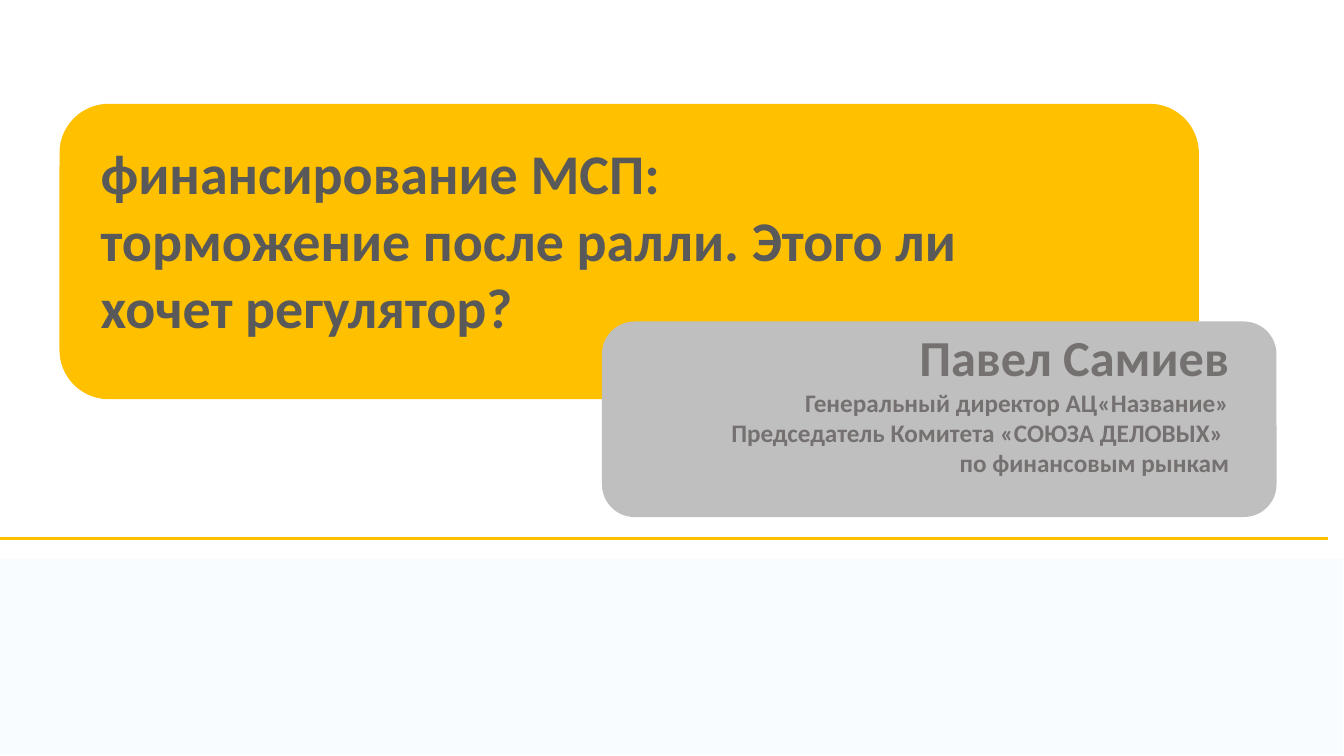
from dataclasses import dataclass

from lxml.etree import SubElement
from pptx import Presentation
from pptx.dml.color import RGBColor
from pptx.enum.shapes import MSO_CONNECTOR, MSO_SHAPE
from pptx.enum.text import MSO_AUTO_SIZE, PP_ALIGN
from pptx.oxml.ns import qn
from pptx.util import Inches, Pt


@dataclass(frozen=True)
class Theme:
    """Colours, font and type sizes of the deck."""
    font: str = "Calibri"
    accent: str = "FFC000"
    panel: str = "BFBFBF"
    footer: str = "F9FCFE"
    title_ink: str = "595959"
    speaker_ink: str = "767171"
    title_size: float = 40
    name_size: float = 36
    role_size: float = 18
    rule_width: float = 2.25


def format_span(para, text, font, size, color, bold=True):
    """Add a formatted span of text to a paragraph."""
    span = para.add_run()
    span.text = text
    span.font.name = font
    span.font.size = Pt(size)
    span.font.bold = bold
    span.font.color.rgb = RGBColor.from_string(color)


class Page:
    """Draws on one slide, with lengths in percent of its width and height."""

    def __init__(self, deck, theme):
        self.theme = theme
        self.width, self.height = deck.slide_width, deck.slide_height
        self.shapes = deck.slides.add_slide(deck.slide_layouts[6]).shapes

    def place(self, left, top, width, height):
        """Turn shares of the slide into lengths."""
        sides = (self.width, self.height) * 2
        return [round(side * share / 100)
                for side, share in zip(sides, (left, top, width, height))]

    def panel(self, area, color, kind=MSO_SHAPE.ROUNDED_RECTANGLE):
        """Draw a filled shape without an outline."""
        shape = self.shapes.add_shape(kind, *self.place(*area))
        shape.shadow.inherit = False
        shape.fill.solid()
        shape.fill.fore_color.rgb = RGBColor.from_string(color)
        shape.line.fill.background()

    def rule(self, start, top, end):
        """Draw a horizontal line in the accent colour."""
        ends = self.place(start, top, end, top)
        line = self.shapes.add_connector(MSO_CONNECTOR.STRAIGHT, *ends)
        line.line.color.rgb = RGBColor.from_string(self.theme.accent)
        line.line.width = Pt(self.theme.rule_width)
        SubElement(line._element.spPr, qn("a:effectLst"))

    def text(self, area, lines, color, align=PP_ALIGN.LEFT):
        """Write one paragraph for each pair of text and size."""
        box = self.shapes.add_textbox(*self.place(*area))
        frame = box.text_frame
        frame.word_wrap = True
        frame.auto_size = MSO_AUTO_SIZE.SHAPE_TO_FIT_TEXT
        for index, (words, size) in enumerate(lines):
            para = frame.add_paragraph() if index else frame.paragraphs[0]
            para.alignment = align
            format_span(para, words, font=self.theme.font, size=size, color=color)


def main():
    """Build the title slide and save the deck."""
    deck = Presentation()
    deck.slide_width, deck.slide_height = Inches(13.33), Inches(7.5)
    theme = Theme()
    page = Page(deck, theme)

    page.rule(0, 71.2, 98.8)
    page.panel((-0.08, 73.87, 100, 26), theme.footer, kind=MSO_SHAPE.RECTANGLE)

    page.panel((4.43, 13.73, 84.77, 39.07), theme.accent)
    page.text((6.75, 17.6, 68.64, 28.27), [
        ("финансирование МСП:", theme.title_size),
        ("торможение после ралли. Этого ли хочет регулятор?", theme.title_size),
    ], theme.title_ink)

    page.panel((44.79, 42.53, 50.19, 25.87), theme.panel)
    page.text((42.16, 42.53, 50.04, 21.6), [
        ("Павел Самиев", theme.name_size),
        ("Генеральный директор АЦ«Название»", theme.role_size),
        ("Председатель Комитета «СОЮЗА ДЕЛОВЫХ» ", theme.role_size),
        ("по финансовым рынкам", theme.role_size),
    ], theme.speaker_ink, align=PP_ALIGN.RIGHT)

    deck.save("out.pptx")


if __name__ == "__main__":
    main()
